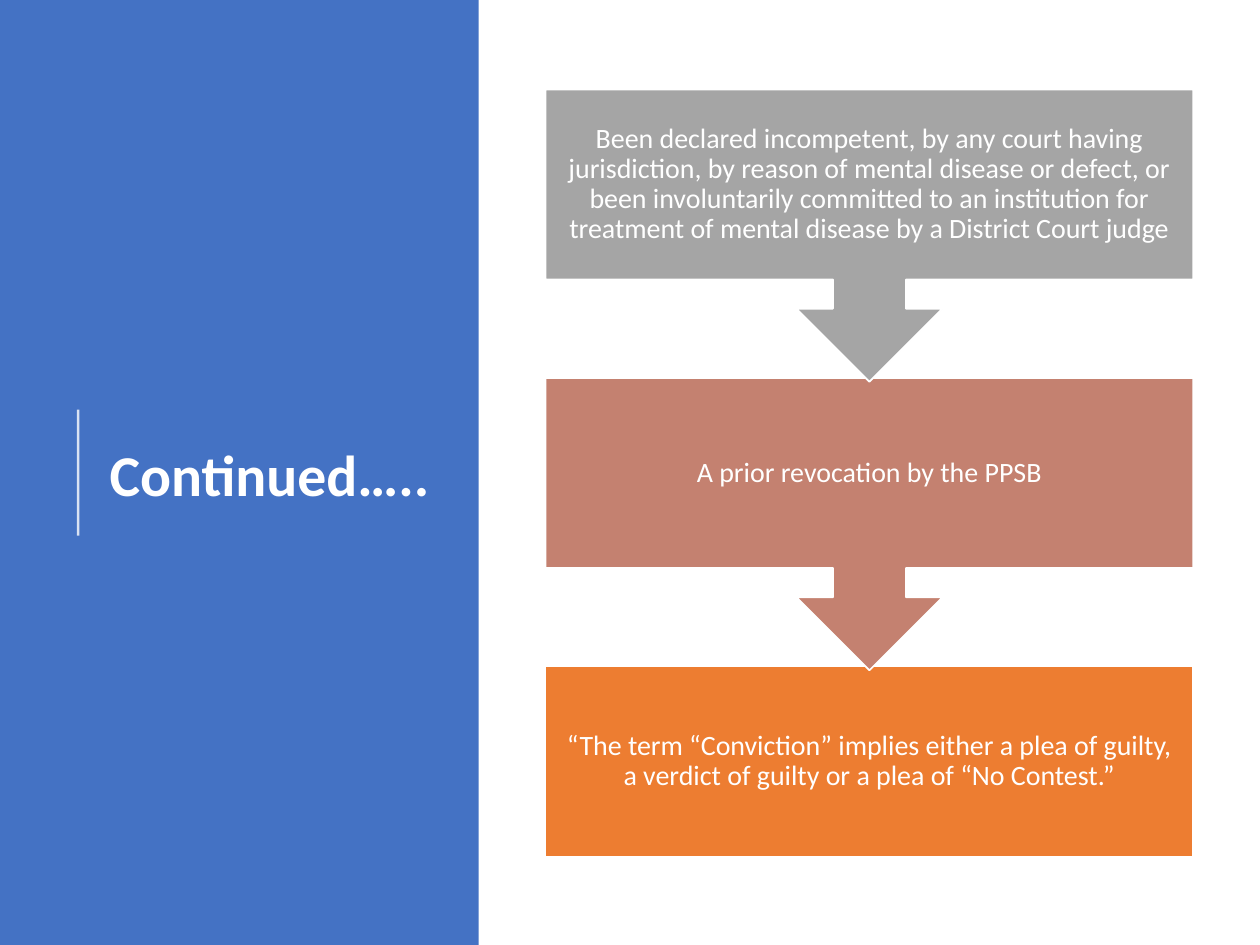
from dataclasses import dataclass

from lxml.etree import SubElement
from pptx import Presentation
from pptx.dml.color import RGBColor
from pptx.enum.shapes import MSO_CONNECTOR as Connector, MSO_SHAPE as Shape
from pptx.enum.text import MSO_ANCHOR as Anchor, MSO_AUTO_SIZE as AutoSize, PP_ALIGN as Align
from pptx.oxml.ns import qn
from pptx.util import Inches, Pt

WHITE = RGBColor(0xFF, 0xFF, 0xFF)
BLUE = RGBColor(0x44, 0x72, 0xC4)
GRAY = RGBColor(0xA5, 0xA5, 0xA5)
CLAY = RGBColor(0xC4, 0x81, 0x70)
ORANGE = RGBColor(0xED, 0x7D, 0x31)

FONT = "Calibri"
SLIDE_WIDTH, SLIDE_HEIGHT = Inches(10), Inches(7.5)
COLUMN = SLIDE_WIDTH / 100
ROW = SLIDE_HEIGHT / 75

STEP_LEFT, STEP_WIDTH = 43.3, 51.4
STEP_TOP, STEP_PITCH = 7.1, 22.9
BOX_HEIGHT, CALLOUT_HEIGHT = 15.1, 23.2
TEXT_INSET = Inches(0.12)


@dataclass(frozen=True)
class Step:
    text: str
    color: RGBColor
    has_arrow: bool = True


STEPS = [
    Step("Been declared incompetent, by any court having jurisdiction, by reason of mental "
         "disease or defect, or been involuntarily committed to an institution for treatment "
         "of mental disease by a District Court judge", GRAY),
    Step("A prior revocation by the PPSB", CLAY),
    Step("“The term “Conviction” implies either a plea of guilty, a verdict of guilty "
         "or a plea of “No Contest.”", ORANGE, has_arrow=False),
]


def grid_box(left: float, top: float, width: float, height: float) -> tuple[int, int, int, int]:
    return round(left * COLUMN), round(top * ROW), round(width * COLUMN), round(height * ROW)


def format_text(text_frame, size: float, bold: bool, align: Align) -> None:
    text_frame.word_wrap = True
    text_frame.auto_size = AutoSize.NONE
    text_frame.vertical_anchor = Anchor.MIDDLE
    for paragraph in text_frame.paragraphs:
        paragraph.alignment = align
        paragraph.line_spacing = 0.9
        for run in paragraph.runs:
            run.font.name = FONT
            run.font.size = Pt(size)
            run.font.bold = bold
            run.font.color.rgb = WHITE


def draw_panel(slide) -> None:
    panel = slide.shapes.add_shape(Shape.RECTANGLE, *grid_box(0, 0, 38, 75))
    panel.shadow.inherit = False
    panel.fill.solid()
    panel.fill.fore_color.rgb = BLUE
    panel.line.fill.background()
    slide.shapes.title.element.addprevious(panel.element)


def draw_title(slide, text: str) -> None:
    title = slide.shapes.title
    title.left, title.top, title.width, title.height = grid_box(7.7, 7.8, 27.6, 60.2)
    title.text_frame.text = text
    format_text(title.text_frame, 33, True, Align.LEFT)


def draw_accent_line(slide) -> None:
    left, top, _, height = grid_box(6.2, 32.5, 0, 10)
    accent = slide.shapes.add_connector(Connector.STRAIGHT, left, top + height, left, top)
    accent.line.color.rgb = WHITE
    accent.line.width = Pt(1.5)
    properties = accent.element.spPr
    color = next(properties.iter(qn("a:srgbClr")))
    SubElement(color, qn("a:alpha")).set("val", "80000")
    SubElement(properties, qn("a:effectLst"))


def draw_step(slide, step: Step, index: int) -> None:
    top = STEP_TOP + index * STEP_PITCH
    kind = Shape.UP_ARROW_CALLOUT if step.has_arrow else Shape.RECTANGLE
    height = CALLOUT_HEIGHT if step.has_arrow else BOX_HEIGHT
    shape = slide.shapes.add_shape(kind, *grid_box(STEP_LEFT, top, STEP_WIDTH, height))
    shape.rotation = 180 if step.has_arrow else 0
    shape.shadow.inherit = False
    shape.fill.solid()
    shape.fill.fore_color.rgb = step.color
    shape.line.color.rgb = WHITE
    shape.line.width = Pt(1)

    label = slide.shapes.add_textbox(*grid_box(STEP_LEFT, top, STEP_WIDTH, BOX_HEIGHT))
    text_frame = label.text_frame
    text_frame.text = step.text
    text_frame.margin_left = text_frame.margin_right = TEXT_INSET
    text_frame.margin_top = text_frame.margin_bottom = TEXT_INSET
    format_text(text_frame, 16, False, Align.CENTER)


def main() -> None:
    presentation = Presentation()
    presentation.slide_width, presentation.slide_height = SLIDE_WIDTH, SLIDE_HEIGHT
    slide = presentation.slides.add_slide(presentation.slide_layouts[5])
    draw_panel(slide)
    draw_title(slide, "Continued…..")
    draw_accent_line(slide)
    for index, step in reversed(list(enumerate(STEPS))):
        draw_step(slide, step, index)
    presentation.save("out.pptx")


if __name__ == "__main__":
    main()
